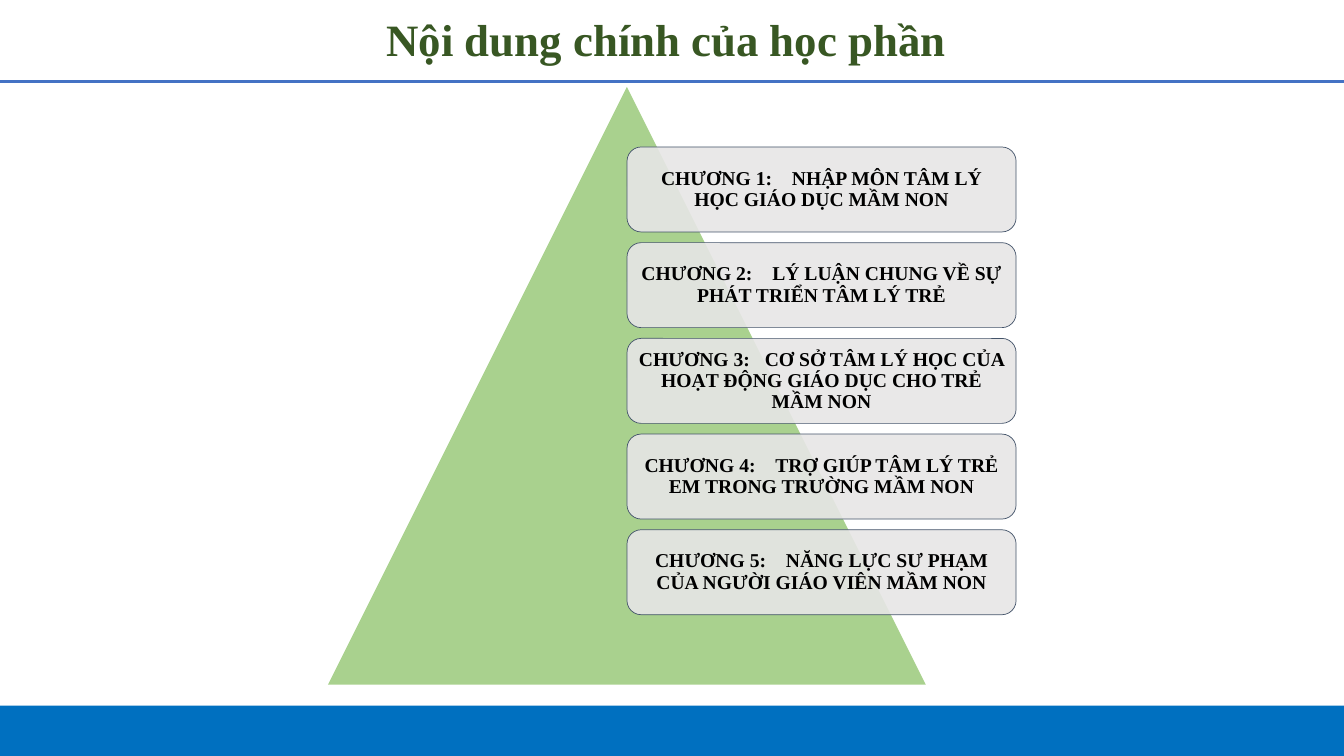
from lxml import etree
from pptx import Presentation
from pptx.dml.color import RGBColor
from pptx.enum import shapes, text
from pptx.oxml import ns
from pptx.util import Pt

FONT = "Times New Roman"
SLIDE_WIDTH, SLIDE_HEIGHT = 960, 540
# Label, chapter title, extra gap between them in points
CHAPTERS = [
    ("CHƯƠNG 1:", "NHẬP MÔN TÂM LÝ HỌC GIÁO DỤC MẦM NON", 10.5),
    ("CHƯƠNG 2:", "LÝ LUẬN CHUNG VỀ SỰ PHÁT TRIỂN TÂM LÝ TRẺ", 10.5),
    ("CHƯƠNG 3:", "CƠ SỞ TÂM LÝ HỌC CỦA HOẠT ĐỘNG GIÁO DỤC CHO TRẺ MẦM NON", 7),
    ("CHƯƠNG 4:", "TRỢ GIÚP TÂM LÝ TRẺ EM TRONG TRƯỜNG MẦM NON", 10.5),
    ("CHƯƠNG 5:", "NĂNG LỰC SƯ PHẠM CỦA NGƯỜI GIÁO VIÊN MẦM NON", 10.5),
]
CARD_LEFT, CARD_TOP, CARD_WIDTH, CARD_HEIGHT = 447.9, 105, 277.9, 60.7
CARD_PITCH = 68.35


def add_filled_shape(kind, left, top, width, height, color):
    shape = slide.shapes.add_shape(kind, Pt(left), Pt(top), Pt(width), Pt(height))
    shape.shadow.inherit = False
    shape.fill.solid()
    shape.fill.fore_color.rgb = RGBColor.from_string(color)
    shape.line.fill.background()
    return shape


def add_bold_run(paragraph, wording, size, color):
    run = paragraph.add_run()
    run.text = wording
    run.font.name = FONT
    run.font.size = Pt(size)
    run.font.bold = True
    run.font.color.rgb = RGBColor.from_string(color)
    return run


presentation = Presentation()
presentation.slide_width = Pt(SLIDE_WIDTH)
presentation.slide_height = Pt(SLIDE_HEIGHT)
slide = presentation.slides.add_slide(presentation.slide_layouts[5])

# Title, rule and footer band
title = slide.shapes.title
title.left, title.top, title.width, title.height = Pt(0), Pt(5.8), Pt(952), Pt(48)
title.text_frame.vertical_anchor = text.MSO_ANCHOR.MIDDLE
paragraph = title.text_frame.paragraphs[0]
paragraph.alignment = text.PP_ALIGN.CENTER
paragraph.line_spacing = 0.9
add_bold_run(paragraph, "Nội dung chính của học phần", 32, "385723")

rule = slide.shapes.add_connector(
    shapes.MSO_CONNECTOR.STRAIGHT, Pt(0), Pt(58.2), Pt(SLIDE_WIDTH), Pt(58.2))
rule.line.color.rgb = RGBColor.from_string("4472C4")
rule.line.width = Pt(2)
etree.SubElement(rule._element.spPr, ns.qn("a:effectLst"))

add_filled_shape(shapes.MSO_SHAPE.RECTANGLE, 0, 504, SLIDE_WIDTH, 36, "0070C0")

# Pyramid with one card per chapter
add_filled_shape(shapes.MSO_SHAPE.ISOSCELES_TRIANGLE, 234.3, 62.1, 427, 427, "A9D18E")

for index, (label, chapter_title, gap) in enumerate(CHAPTERS):
    card = add_filled_shape(
        shapes.MSO_SHAPE.ROUNDED_RECTANGLE, CARD_LEFT, CARD_TOP + index * CARD_PITCH,
        CARD_WIDTH, CARD_HEIGHT, "E7E6E6")
    fill_color = card._element.spPr.find(ns.qn("a:solidFill")).find(ns.qn("a:srgbClr"))
    etree.SubElement(fill_color, ns.qn("a:alpha"), val="90000")
    card.line.color.rgb = RGBColor.from_string("44546A")
    card.line.width = Pt(0.5)

    frame = card.text_frame
    frame.word_wrap = True
    frame.vertical_anchor = text.MSO_ANCHOR.MIDDLE
    frame.margin_left = frame.margin_right = Pt(4.5)
    frame.margin_top = frame.margin_bottom = Pt(4.5)
    paragraph = frame.paragraphs[0]
    paragraph.alignment = text.PP_ALIGN.CENTER
    paragraph.line_spacing = 0.9
    add_bold_run(paragraph, label, 14, "000000")
    space = add_bold_run(paragraph, " ", 14, "000000")
    # Character spacing, in hundredths of a point, widens the single space
    space._r.get_or_add_rPr().set("spc", str(int(gap * 100)))
    add_bold_run(paragraph, chapter_title, 14, "000000")

presentation.save("out.pptx")
